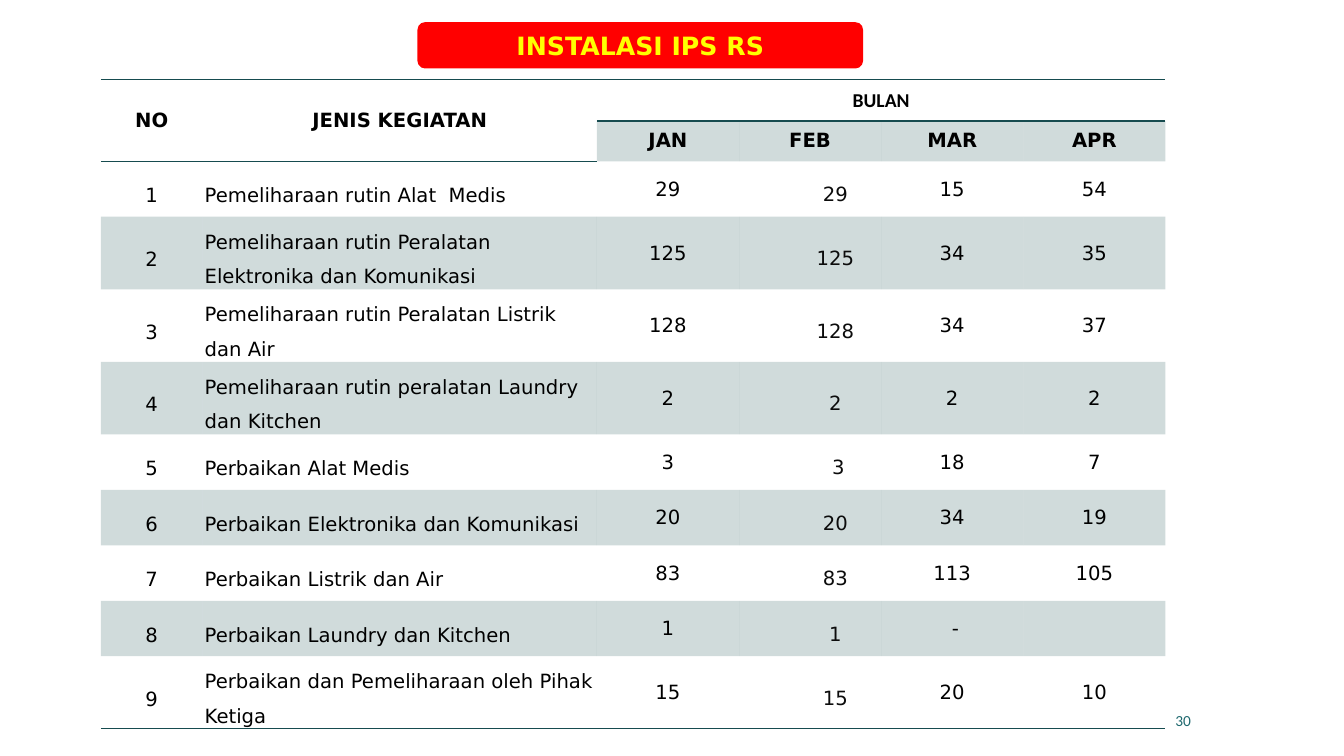
from pptx import Presentation
from pptx.dml.color import RGBColor
from pptx.enum.shapes import MSO_SHAPE
from pptx.enum.text import MSO_ANCHOR, PP_ALIGN
from pptx.oxml import parse_xml
from pptx.oxml.ns import nsdecls
from pptx.util import Inches, Pt

LEFT, CENTER, RIGHT = PP_ALIGN.LEFT, PP_ALIGN.CENTER, PP_ALIGN.RIGHT
MIDDLE = MSO_ANCHOR.MIDDLE
ROUNDED = MSO_SHAPE.ROUNDED_RECTANGLE

BODY_FONT = "DejaVu Sans"
SMALL_FONT = "Calibri"
TEAL = "164B4F"
BLACK = "000000"
PLAIN_STYLE = "{2D5ABB26-0587-4C30-8999-92F81FD0307C}"

COLUMN_WIDTHS = [1.01, 3.91] + [1.41] * 4
HEADER_HEIGHTS = [0.41, 0.4]
ROW_HEIGHT = 0.55
MONTHS = ["JAN", "FEB", "MAR", "APR"]
ACTIVITIES = [
    ("Pemeliharaan rutin Alat  Medis", "29", "29", "15", "54"),
    ("Pemeliharaan rutin Peralatan Elektronika dan Komunikasi", "125", "125", "34", "35"),
    ("Pemeliharaan rutin Peralatan Listrik dan Air", "128", "128", "34", "37"),
    ("Pemeliharaan rutin peralatan Laundry dan Kitchen", "2", "2", "2", "2"),
    ("Perbaikan Alat Medis", "3", " 3", "18", "7"),
    ("Perbaikan Elektronika dan Komunikasi", "20", "20", "34", "19"),
    ("Perbaikan Listrik dan Air", "83", "83", "113", "105"),
    ("Perbaikan Laundry dan Kitchen", "1", "1", " -", ""),
    ("Perbaikan dan Pemeliharaan oleh Pihak Ketiga", "15", "15", "20", "10"),
]

HEADER = dict(bold=True, margins=(0.2, 0.08, 0.2, 0.08))
LABEL = dict(spacing=1.5, margins=(0.02, 0.02, 0.02, 0))
COUNT = dict(margins=(0.01, 0.01, 0.01, 0))
INDENTED_COUNT = dict(spacing=1.5, indent=0.5, color="0C0C0C", margins=(0.07, 0, 0.07, 0))
COLUMN_FORMATS = [LABEL, dict(LABEL, align=LEFT), COUNT, INDENTED_COUNT, COUNT, COUNT]


def rgb(color):
    return RGBColor.from_string(color)


def write_text(frame, text, size=14, font=BODY_FONT, color=BLACK, bold=False,
               align=CENTER, spacing=None, indent=0):
    para = frame.paragraphs[0]
    para.alignment = align
    if spacing:
        para.line_spacing = spacing
    if indent:
        properties = para._p.get_or_add_pPr()
        properties.set("marL", str(Inches(indent)))
        properties.set("indent", "0")
    if not text:
        para.font.size = Pt(size)
        return
    span = para.add_run()
    span.text = text
    span.font.name = font
    span.font.size = Pt(size)
    span.font.bold = bold
    span.font.color.rgb = rgb(color)


def fill_cell(cell, text, margins, **text_format):
    cell.vertical_anchor = MIDDLE
    (cell.margin_left, cell.margin_top,
     cell.margin_right, cell.margin_bottom) = [Inches(m) for m in margins]
    write_text(cell.text_frame, text, **text_format)


def style_cell(cell, edges="", shaded=False):
    """Rule the given edges (T, B) and shade the cell with pale teal."""
    properties = cell._tc.get_or_add_tcPr()
    for edge in edges:
        properties.append(parse_xml(
            f'<a:ln{edge} {nsdecls("a")} w="{Pt(1)}"><a:solidFill>'
            f'<a:srgbClr val="{TEAL}"/></a:solidFill></a:ln{edge}>'))
    if not shaded:
        cell.fill.background()
        return
    cell.fill.solid()
    cell.fill.fore_color.rgb = rgb(TEAL)
    tint = properties.solidFill if hasattr(properties, "solidFill") else properties[-1]
    tint[0].append(parse_xml(f'<a:alpha {nsdecls("a")} val="20000"/>'))


def add_activity_table(page):
    heights = HEADER_HEIGHTS + [ROW_HEIGHT] * len(ACTIVITIES)
    table = page.shapes.add_table(
        len(heights), len(COLUMN_WIDTHS), Inches(1), Inches(0.79),
        Inches(sum(COLUMN_WIDTHS)), Inches(sum(heights))).table
    table.first_row = table.horz_banding = False
    table._tbl.tblPr[0].text = PLAIN_STYLE
    for column, width in zip(table.columns, COLUMN_WIDTHS):
        column.width = Inches(width)
    for row, height in zip(table.rows, heights):
        row.height = Inches(height)

    table.cell(0, 0).merge(table.cell(1, 0))
    table.cell(0, 1).merge(table.cell(1, 1))
    table.cell(0, 2).merge(table.cell(0, 5))
    fill_cell(table.cell(0, 0), "NO", **HEADER)
    fill_cell(table.cell(0, 1), "JENIS KEGIATAN", **HEADER)
    fill_cell(table.cell(0, 2), "BULAN", font=SMALL_FONT, **HEADER)
    for column, month in enumerate(MONTHS, start=2):
        fill_cell(table.cell(1, column), month, **HEADER)
    for number, activity in enumerate(ACTIVITIES, start=1):
        for column, text in enumerate((str(number), *activity)):
            fill_cell(table.cell(number + 1, column), text, **COLUMN_FORMATS[column])

    last = len(heights) - 1
    for row in range(len(heights)):
        for column in range(len(COLUMN_WIDTHS)):
            month_column = column >= 2
            if row == 0:
                edges = "TB"
            elif row == last or (row == 1 and not month_column):
                edges = "B"
            else:
                edges = ""
            shaded = row % 2 == 1 and (row > 1 or month_column)
            style_cell(table.cell(row, column), edges, shaded and row >= 1)


def add_title(page, text):
    box = page.shapes.add_shape(ROUNDED, Inches(4.14), Inches(0.22), Inches(4.42), Inches(0.46))
    box.shadow.inherit = False
    box.fill.solid()
    box.fill.fore_color.rgb = rgb("FF0000")
    box.line.fill.background()
    box.text_frame.vertical_anchor = MIDDLE
    write_text(box.text_frame, text, size=18, color="FFFF00", bold=True)


def add_page_number(page, text):
    box = page.shapes.add_textbox(Inches(8.8), Inches(6.95), Inches(3.11), Inches(0.4))
    box.text_frame.word_wrap = True
    box.text_frame.vertical_anchor = MIDDLE
    write_text(box.text_frame, text, size=11, font=SMALL_FONT, color="1F696F", align=RIGHT)


def main():
    deck = Presentation()
    deck.slide_width, deck.slide_height = Inches(13.33), Inches(7.5)
    page = deck.slides.add_slide(deck.slide_layouts[6])
    add_page_number(page, "30")
    add_activity_table(page)
    add_title(page, "INSTALASI IPS RS")
    deck.save("out.pptx")


if __name__ == "__main__":
    main()
